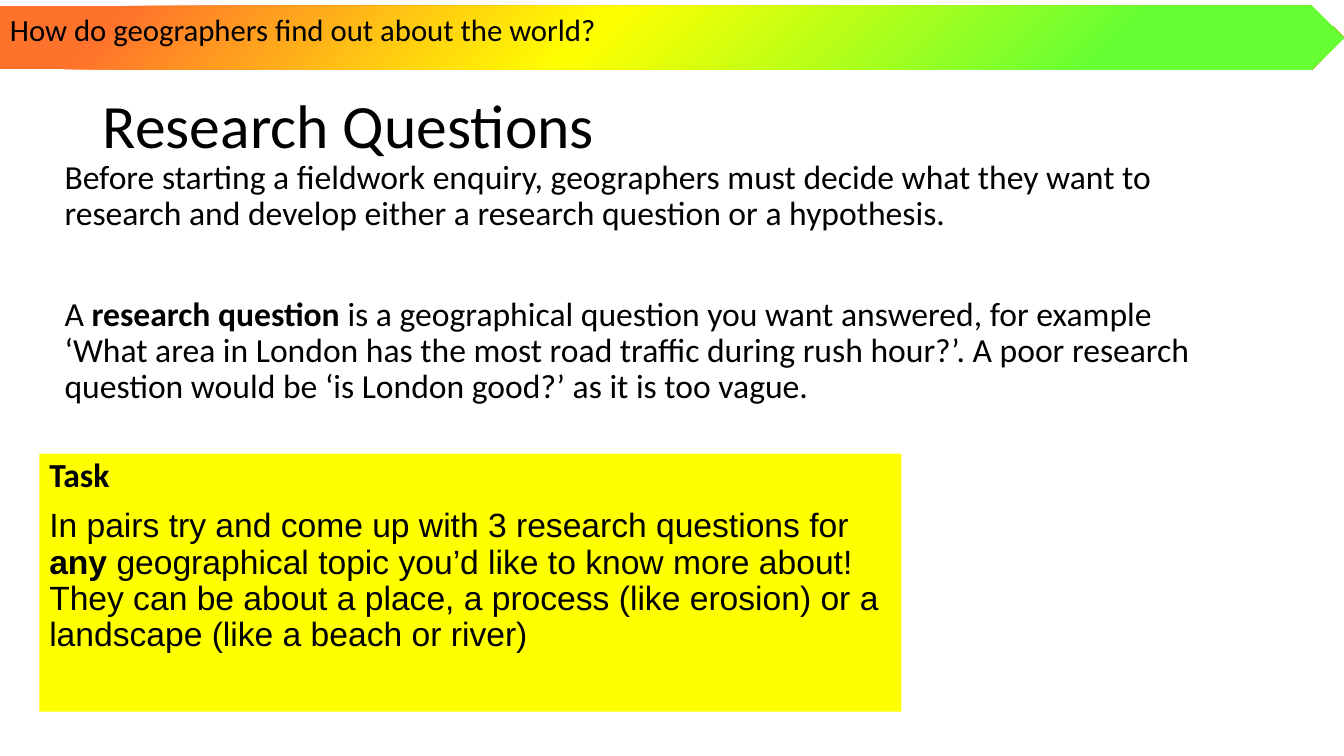
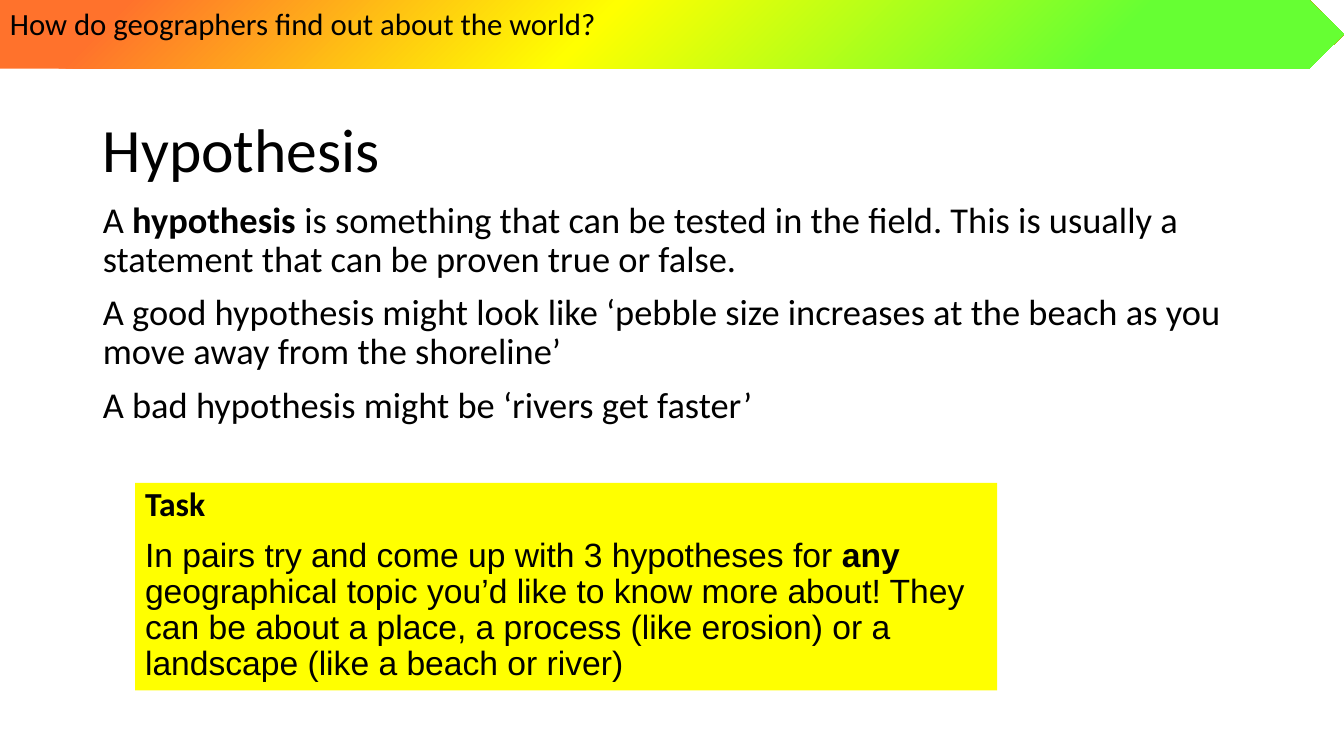
from dataclasses import dataclass

from lxml import etree
from pptx import Presentation
from pptx.dml.color import RGBColor
from pptx.enum.shapes import MSO_SHAPE as Shape
from pptx.enum.text import MSO_ANCHOR as Anchor
from pptx.enum.text import MSO_AUTO_SIZE as Fit
from pptx.enum.text import PP_ALIGN as Align
from pptx.oxml.ns import nsdecls, qn
from pptx.util import Inches, Pt

# Content: text between bars is bold
BANNER = "How do geographers find out about the world?"
TASK = ("In pairs try and come up with 3 {} for |any |geographical topic you’d like "
        "to know more about! They can be about a place, a process (like erosion) "
        "or a landscape (like a beach or river)")
SLIDES = [
    {
        "title": "Research Questions",
        "body": [
            "Before starting a fieldwork enquiry, geographers must decide what they "
            "want to research and develop either a research question or a hypothesis.",
            "A |research question |is a geographical question you want answered, for "
            "example ‘What area in London has the most road traffic during rush "
            "hour?’. A poor research question would be ‘is London good?’ as it is "
            "too vague.",
        ],
        "topic": "research questions",
        "size": 24, "gap": 46,
        "title_at": (0.92, 0.55), "body_at": (0.54, 1.54),
        "band": (0.06, 0.63), "task_at": (0.39, 4.5, 8.55, 2.56),
    },
    {
        "title": "Hypothesis",
        "body": [
            "A |hypothesis |is something that can be tested in the field. This is "
            "usually a statement that can be proven true or false.",
            "A good hypothesis might look like ‘pebble size increases at the beach "
            "as you move away from the shoreline’",
            "A bad hypothesis might be ‘rivers get faster’",
        ],
        "topic": "hypotheses",
        "size": 26, "gap": 10,
        "title_at": (0.92, 0.79), "body_at": (0.92, 1.95),
        "band": (0, 0.68), "task_at": (1.34, 4.79, 8.55, 2.06),
    },
]


@dataclass(frozen=True)
class Theme:
    font: str = "Calibri"
    alt: str = "Arial"
    ink: RGBColor = RGBColor(0, 0, 0)
    task: RGBColor = RGBColor(0xFF, 0xFF, 0)
    glow: tuple = ((0, "66FF33"), (18, "66FF33"), (56, "FFFF00"),
                   (91, "FF722C"), (100, "FF722C"))
    title: int = 44
    band: int = 22
    text: int = 24
    gap: int = 10
    lead: float = 0.9


THEME = Theme()
WIDE, HIGH = 13.33, 7.5
TITLE_SIZE, BODY_SIZE = (11.5, 1.45), (11.5, 4.76)


# Text helpers
def place(shape, box):
    shape.left, shape.top, shape.width, shape.height = map(Inches, box)


def write(para, text, size, font=THEME.font, bold=False, gap=0, lead=THEME.lead):
    para.alignment = Align.LEFT
    para.line_spacing, para.space_before = lead, Pt(gap)
    face = para.font
    face.name, face.size, face.color.rgb = font, Pt(size), THEME.ink
    for i, part in enumerate(text.split("|")):
        run = para.add_run()
        run.text = part
        run.font.bold = bold or i % 2 == 1


def frame(shape, anchor=Anchor.TOP):
    box = shape.text_frame
    box.word_wrap, box.auto_size, box.vertical_anchor = True, Fit.NONE, anchor
    return box


def plain(para):
    props = para._p.get_or_add_pPr()
    props.set("marL", "0")
    props.set("indent", "0")
    mark = etree.Element(qn("a:buNone"))
    props.insert_element_before(mark, "a:tabLst", "a:defRPr", "a:extLst")


def block(slide, kind, box):
    shape = slide.shapes.add_shape(kind, *map(Inches, box))
    shape.shadow.inherit = False
    shape.line.fill.background()
    return shape


# Round gradient centred on the lower right corner
def glow(shape):
    stops = "".join(f'<a:gs pos="{pos * 1000}"><a:srgbClr val="{tint}"/></a:gs>'
                    for pos, tint in THEME.glow)
    fill = etree.fromstring(
        f'<a:gradFill {nsdecls("a")} rotWithShape="1"><a:gsLst>{stops}</a:gsLst>'
        '<a:path path="circle"><a:fillToRect l="100000" t="100000"/></a:path>'
        '</a:gradFill>')
    shape.fill.background()
    props = shape._element.spPr
    props.replace(props.find(qn("a:noFill")), fill)


# Slide parts
def add_title(slide, data):
    title = slide.shapes.title
    place(title, data["title_at"] + TITLE_SIZE)
    write(frame(title, Anchor.MIDDLE).paragraphs[0], data["title"], THEME.title)


def add_body(slide, data):
    body = slide.placeholders[1]
    place(body, data["body_at"] + BODY_SIZE)
    box = frame(body)
    for i, text in enumerate(data["body"]):
        para = box.add_paragraph() if i else box.paragraphs[0]
        write(para, text, data["size"], gap=data["gap"] if i else THEME.gap)
        plain(para)


def add_band(slide, data):
    top, high = data["band"]
    band = block(slide, Shape.RIGHT_ARROW, (0, top, WIDE, high))
    band.adjustments[0], band.adjustments[1] = 1, 0.51
    glow(band)
    write(frame(band).paragraphs[0], BANNER, THEME.band, lead=1.0)


def add_task(slide, data):
    task = block(slide, Shape.RECTANGLE, data["task_at"])
    task.fill.solid()
    task.fill.fore_color.rgb = THEME.task
    box = frame(task)
    write(box.paragraphs[0], "Task", THEME.text, bold=True, gap=THEME.gap)
    write(box.add_paragraph(), TASK.format(data["topic"]), THEME.text,
          font=THEME.alt, gap=THEME.gap)


def main():
    deck = Presentation()
    deck.slide_width, deck.slide_height = Inches(WIDE), Inches(HIGH)
    for data in SLIDES:
        slide = deck.slides.add_slide(deck.slide_layouts[1])
        for add in (add_title, add_body, add_band, add_task):
            add(slide, data)
    deck.save("out.pptx")


if __name__ == "__main__":
    main()
